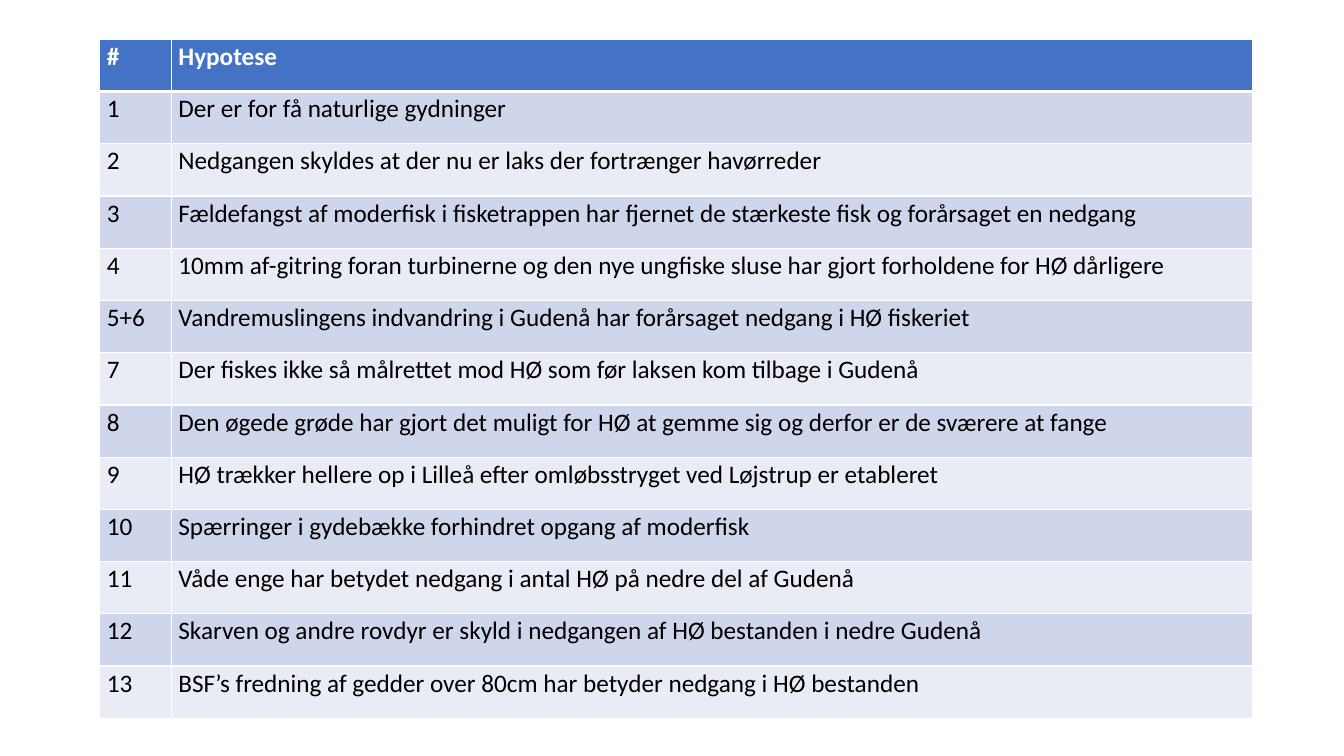
from pptx import Presentation
from pptx.dml.color import RGBColor as RGB
from pptx.oxml import parse_xml
from pptx.oxml.ns import nsdecls
from pptx.util import Inches, Pt

ROWS = [
    ("#", "Hypotese"),
    ("1", "Der er for få naturlige gydninger"),
    ("2", "Nedgangen skyldes at der nu er laks der fortrænger havørreder"),
    ("3", "Fældefangst af moderfisk i fisketrappen har fjernet de stærkeste fisk og forårsaget en nedgang"),
    ("4", "10mm af-gitring foran turbinerne og den nye ungfiske sluse har gjort forholdene for HØ dårligere"),
    ("5+6", "Vandremuslingens indvandring i Gudenå har forårsaget nedgang i HØ fiskeriet"),
    ("7", "Der fiskes ikke så målrettet mod HØ som før laksen kom tilbage i Gudenå"),
    ("8", "Den øgede grøde har gjort det muligt for HØ at gemme sig og derfor er de sværere at fange"),
    ("9", "HØ trækker hellere op i Lilleå efter omløbsstryget ved Løjstrup er etableret"),
    ("10", "Spærringer i gydebække forhindret opgang af moderfisk"),
    ("11", "Våde enge har betydet nedgang i antal HØ på nedre del af Gudenå"),
    ("12", "Skarven og andre rovdyr er skyld i nedgangen af HØ bestanden i nedre Gudenå"),
    ("13", "BSF’s fredning af gedder over 80cm har betyder nedgang i HØ bestanden"),
]
WIDTHS = (0.71, 10.72)
LEFT, TOP, HEIGHT = 0.99, 0.39, 6.74
HEAD, BANDS = "4472C4", ("E9EBF5", "CFD5EA")
WHITE, BLACK = "FFFFFF", "000000"


def color(value):
    return RGB.from_string(value)


def add_border(cell, side, points):
    cell._tc.get_or_add_tcPr().append(parse_xml(
        f'<a:ln{side} {nsdecls("a")} w="{Pt(points)}"><a:solidFill>'
        f'<a:srgbClr val="{WHITE}"/></a:solidFill></a:ln{side}>'))


def style(cell, row):
    head = row == 0
    for side in "LRTB":
        thick = (head and side == "B") or (row == 1 and side == "T")
        add_border(cell, side, 3 if thick else 1)
    cell.fill.solid()
    cell.fill.fore_color.rgb = color(HEAD if head else BANDS[row % 2])
    cell.margin_left = cell.margin_right = Inches(0.07)
    cell.margin_top = cell.margin_bottom = 0
    para = cell.text_frame.paragraphs[0]
    para.line_spacing = 1.07
    para.space_after = Pt(8)
    font = para.font
    font.name, font.size, font.bold = "Calibri", Pt(18), head
    font.color.rgb = color(WHITE if head else BLACK)


def main():
    deck = Presentation()
    deck.slide_width, deck.slide_height = Inches(13.33), Inches(7.5)
    slide = deck.slides.add_slide(deck.slide_layouts[6])
    table = slide.shapes.add_table(
        len(ROWS), len(WIDTHS), Inches(LEFT), Inches(TOP),
        Inches(sum(WIDTHS)), Inches(HEIGHT)).table
    for col, width in zip(table.columns, WIDTHS):
        col.width = Inches(width)
    for r, row in enumerate(ROWS):
        for c, text in enumerate(row):
            cell = table.cell(r, c)
            cell.text = text
            style(cell, r)
    deck.save("out.pptx")


if __name__ == "__main__":
    main()
